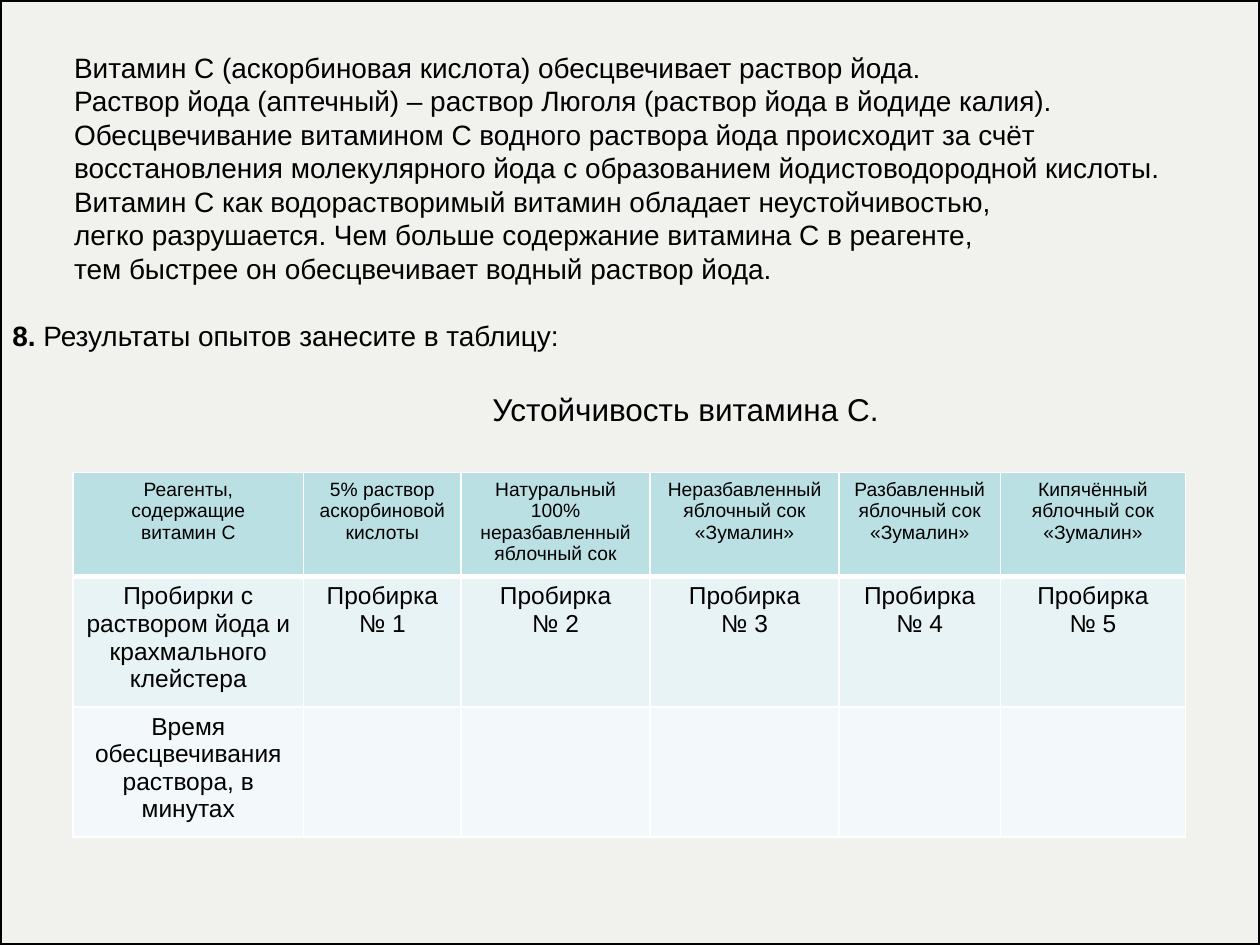
from dataclasses import dataclass

from lxml import etree
from pptx import Presentation
from pptx import util as u
from pptx.dml.color import RGBColor
from pptx.enum import shapes, text
from pptx.oxml.ns import qn

WIDTH, HEIGHT = u.Inches(10), u.Inches(7.5)
FONT = "Arial"
BLACK = RGBColor(0x00, 0x00, 0x00)
WHITE = RGBColor(0xFF, 0xFF, 0xFF)
PAPER = RGBColor(0xF1, 0xF2, 0xED)
HEADER = RGBColor(0xBB, 0xE0, 0xE3)
BAND = RGBColor(0xE7, 0xF3, 0xF4)
PALE = RGBColor(0xF3, 0xF9, 0xFA)


@dataclass(frozen=True)
class Line:
    words: str
    lead: str = ""
    size: int = 16
    indent: float = 0.049
    before: int = 0


@dataclass(frozen=True)
class Row:
    cells: tuple[str, ...]
    fill: RGBColor
    size: int
    height: float
    top: int = 1
    bottom: int = 1


LINES = (
    Line("Витамин С (аскорбиновая кислота) обесцвечивает раствор йода."),
    Line("Раствор йода (аптечный) – раствор Люголя (раствор йода в йодиде калия)."),
    Line("Обесцвечивание витамином С водного раствора йода происходит за счёт"),
    Line("восстановления молекулярного йода с образованием йодистоводородной кислоты."),
    Line("Витамин С как водорастворимый витамин обладает неустойчивостью,"),
    Line("легко разрушается. Чем больше содержание витамина С в реагенте,"),
    Line("тем быстрее он обесцвечивает водный раствор йода."),
    Line(" Результаты опытов занесите в таблицу:", lead="8.", indent=0, before=19),
    Line("Устойчивость витамина С.", size=18, indent=0.381, before=22),
)
COLUMNS = (0.183, 0.125, 0.15, 0.15, 0.128, 0.147)
ROWS = (
    Row(("Реагенты, содержащие\nвитамин С",
         "5% раствор\nаскорбиновой кислоты",
         "Натуральный 100% неразбавленный\nяблочный сок",
         "Неразбавленный яблочный сок\n«Зумалин»",
         "Разбавленный\nяблочный сок\n«Зумалин»",
         "Кипячённый\nяблочный сок\n«Зумалин»"), HEADER, 11, 0.11, bottom=3),
    Row(("Пробирки с раствором йода и крахмального\nклейстера",
         *(f"Пробирка\n№ {number}" for number in range(1, 6))),
        BAND, 14, 0.138, top=3),
    Row(("Время обесцвечивания\nраствора, в минутах", *[""] * 5), PALE, 14, 0.138),
)


def write(para, words: str, *, size: int, bold: bool = False,
          align=text.PP_ALIGN.LEFT) -> None:
    para.alignment = align
    span = para.add_run()
    span.text = words
    span.font.name = FONT
    span.font.size = u.Pt(size)
    span.font.bold = bold
    span.font.color.rgb = BLACK


def draw_page_text(page) -> None:
    box = page.shapes.add_shape(shapes.MSO_SHAPE.RECTANGLE, 0, 0, WIDTH, HEIGHT)
    box.shadow.inherit = False
    box.fill.solid()
    box.fill.fore_color.rgb = PAPER
    box.line.color.rgb = BLACK
    box.line.width = u.Pt(2)
    frame = box.text_frame
    frame.word_wrap = True
    frame.vertical_anchor = text.MSO_ANCHOR.TOP
    frame.margin_top = int(HEIGHT * 0.053)
    for index, line in enumerate(LINES):
        para = frame.add_paragraph() if index else frame.paragraphs[0]
        para.space_before = u.Pt(line.before)
        para.line_spacing = u.Pt(line.size * 1.2)
        para._p.get_or_add_pPr().set("indent", str(int(WIDTH * line.indent)))
        if line.lead:
            write(para, line.lead, size=line.size, bold=True)
        write(para, line.words, size=line.size)


def set_borders(cell, row: Row) -> None:
    properties = cell._tc.get_or_add_tcPr()
    widths = {"lnL": 1, "lnR": 1, "lnT": row.top, "lnB": row.bottom}
    for position, (side, width) in enumerate(widths.items()):
        border = etree.Element(qn(f"a:{side}"), w=str(u.Pt(width)))
        fill = etree.SubElement(border, qn("a:solidFill"))
        etree.SubElement(fill, qn("a:srgbClr"), val=str(WHITE))
        properties.insert(position, border)


def draw_table(page) -> None:
    frame = page.shapes.add_table(
        len(ROWS), len(COLUMNS), int(WIDTH * 0.058), HEIGHT // 2,
        int(WIDTH * sum(COLUMNS)), int(HEIGHT * sum(row.height for row in ROWS)))
    table = frame.table
    table.first_row = table.horz_banding = False
    for column, share in zip(table.columns, COLUMNS):
        column.width = int(WIDTH * share)
    for row_index, row in enumerate(ROWS):
        table.rows[row_index].height = int(HEIGHT * row.height)
        for column_index, words in enumerate(row.cells):
            cell = table.cell(row_index, column_index)
            cell.fill.solid()
            cell.fill.fore_color.rgb = row.fill
            set_borders(cell, row)
            if not words:
                continue
            for index, part in enumerate(words.split("\n")):
                para = (cell.text_frame.add_paragraph() if index
                        else cell.text_frame.paragraphs[0])
                write(para, part, size=row.size, align=text.PP_ALIGN.CENTER)


def main() -> None:
    deck = Presentation()
    deck.slide_width, deck.slide_height = WIDTH, HEIGHT
    page = deck.slides.add_slide(deck.slide_layouts[6])
    draw_page_text(page)
    draw_table(page)
    deck.save("out.pptx")


if __name__ == "__main__":
    main()
